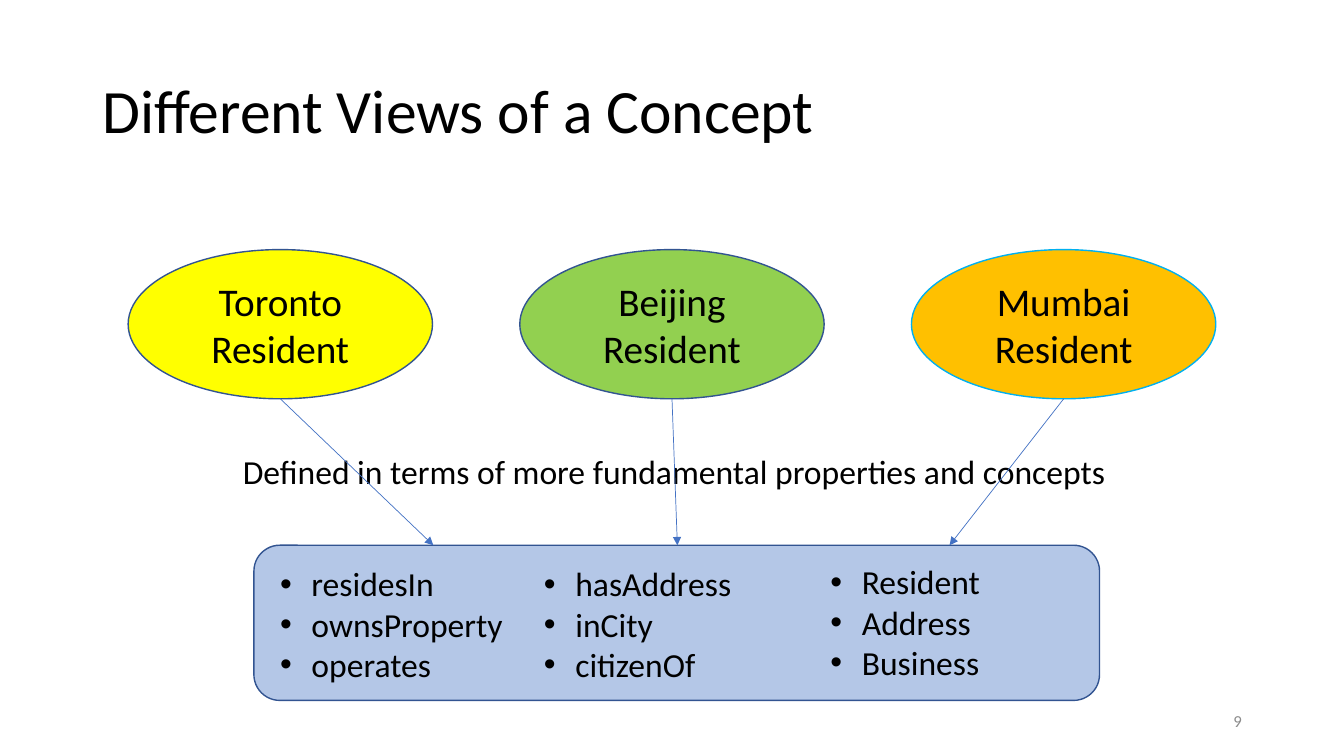
from dataclasses import dataclass

from lxml import etree
from pptx import Presentation
from pptx.dml.color import RGBColor
from pptx.enum.shapes import MSO_CONNECTOR, MSO_SHAPE
from pptx.enum.text import MSO_ANCHOR, PP_ALIGN
from pptx.oxml.ns import qn
from pptx.shapes.autoshape import Shape
from pptx.slide import Slide
from pptx.text.text import TextFrame
from pptx.util import Cm, Pt

OVAL = MSO_SHAPE.OVAL
ROUND = MSO_SHAPE.ROUNDED_RECTANGLE
LINE = MSO_CONNECTOR.STRAIGHT
TOP, MIDDLE = MSO_ANCHOR.TOP, MSO_ANCHOR.MIDDLE
LEFT, CENTER, RIGHT = PP_ALIGN.LEFT, PP_ALIGN.CENTER, PP_ALIGN.RIGHT

BLACK = RGBColor(0x00, 0x00, 0x00)
GRAY = RGBColor(0x8C, 0x8C, 0x8C)
NAVY = RGBColor(0x32, 0x54, 0x91)
BLUE = RGBColor(0x44, 0x72, 0xC4)
PALE = RGBColor(0xB4, 0xC7, 0xE7)
CYAN = RGBColor(0x00, 0xB0, 0xF0)
YELLOW = RGBColor(0xFF, 0xFF, 0x00)
GREEN = RGBColor(0x92, 0xD0, 0x50)
ORANGE = RGBColor(0xFF, 0xC0, 0x00)

FONT = "Calibri"
INDENT = Cm(0.79)

# Row of ovals above the box, in centimetres
OVAL_X, OVAL_Y, OVAL_W, OVAL_H = 3.23, 6.29, 7.67, 3.76
STEP = 9.87
BOX_X, BOX_Y, BOX_W, BOX_H = 6.4, 13.74, 21.31, 3.91


@dataclass
class Area:
    x: float
    y: float
    w: float
    h: float

    def place(self) -> tuple[Cm, Cm, Cm, Cm]:
        return Cm(self.x), Cm(self.y), Cm(self.w), Cm(self.h)


@dataclass
class View:
    city: str
    fill: RGBColor
    edge: RGBColor
    tip: float


@dataclass
class Terms:
    area: Area
    words: list[str]


VIEWS = [
    View("Toronto", YELLOW, NAVY, 10.92),
    View("Beijing", GREEN, NAVY, 17.07),
    View("Mumbai", ORANGE, CYAN, 23.93),
]
TERMS = [
    Terms(Area(6.81, 14.07, 6.17, 3.33), ["residesIn", "ownsProperty", "operates"]),
    Terms(Area(13.46, 14.07, 5.28, 3.33), ["hasAddress", "inCity", "citizenOf"]),
    Terms(Area(20.68, 14.02, 4.32, 3.33), ["Resident", "Address", "Business"]),
]


def write(frame: TextFrame, text: str, size: int, color: RGBColor = BLACK,
          align: PP_ALIGN = LEFT, anchor: MSO_ANCHOR = TOP) -> None:
    frame.word_wrap = True
    frame.vertical_anchor = anchor
    frame.text = text
    for para in frame.paragraphs:
        para.alignment = align
        for run in para.runs:
            run.font.name = FONT
            run.font.size = Pt(size)
            run.font.color.rgb = color


def add_text(slide: Slide, area: Area, text: str, size: int,
             color: RGBColor = BLACK, align: PP_ALIGN = LEFT,
             anchor: MSO_ANCHOR = TOP) -> TextFrame:
    frame = slide.shapes.add_textbox(*area.place()).text_frame
    write(frame, text, size, color, align, anchor)
    return frame


def add_form(slide: Slide, kind: MSO_SHAPE, area: Area,
             fill: RGBColor, edge: RGBColor) -> Shape:
    form = slide.shapes.add_shape(kind, *area.place())
    form.shadow.inherit = False
    form.fill.solid()
    form.fill.fore_color.rgb = fill
    form.line.color.rgb = edge
    form.line.width = Pt(1)
    return form


def add_oval(slide: Slide, view: View, x: float) -> None:
    area = Area(x, OVAL_Y, OVAL_W, OVAL_H)
    oval = add_form(slide, OVAL, area, view.fill, view.edge)
    write(oval.text_frame, f"{view.city}\nResident", 28, align=CENTER, anchor=MIDDLE)


def add_terms(slide: Slide, terms: Terms) -> None:
    frame = add_text(slide, terms.area, "\n".join(terms.words), 24)
    for para in frame.paragraphs:
        props = para._p.get_or_add_pPr()
        props.set("marL", str(INDENT))
        props.set("indent", str(-INDENT))
        etree.SubElement(props, qn("a:buFont"), typeface="Arial")
        etree.SubElement(props, qn("a:buChar"), char="•")


def add_arrow(slide: Slide, start: float, tip: float) -> None:
    arrow = slide.shapes.add_connector(
        LINE, Cm(start), Cm(OVAL_Y + OVAL_H), Cm(tip), Cm(BOX_Y))
    arrow.line.color.rgb = BLUE
    arrow.line.width = Pt(0.5)
    etree.SubElement(arrow.line._get_or_add_ln(), qn("a:tailEnd"), type="triangle")
    etree.SubElement(arrow._element.spPr, qn("a:effectLst"))


def main() -> None:
    deck = Presentation()
    deck.slide_width, deck.slide_height = Cm(33.87), Cm(19.05)
    slide = deck.slides.add_slide(deck.slide_layouts[6])

    # Title and page number
    title = add_text(slide, Area(2.33, 1.02, 29.21, 3.68),
                     "Different Views of a Concept", 44, anchor=MIDDLE)
    title.paragraphs[0].line_spacing = 0.9
    add_text(slide, Area(23.93, 17.65, 7.62, 1.02), "9", 12, GRAY, RIGHT, MIDDLE)

    # City views
    lefts = [OVAL_X + i * STEP for i in range(len(VIEWS))]
    for view, x in zip(VIEWS, lefts):
        add_oval(slide, view, x)

    # Shared terms
    add_form(slide, ROUND, Area(BOX_X, BOX_Y, BOX_W, BOX_H), PALE, NAVY)
    for terms in TERMS:
        add_terms(slide, terms)
    add_text(slide, Area(5.87, 11.23, 22.45, 1.27),
             "Defined in terms of more fundamental properties and concepts", 24)

    # Arrows from views to terms
    for view, x in zip(VIEWS, lefts):
        add_arrow(slide, x + OVAL_W / 2, view.tip)

    deck.save("out.pptx")


if __name__ == "__main__":
    main()
